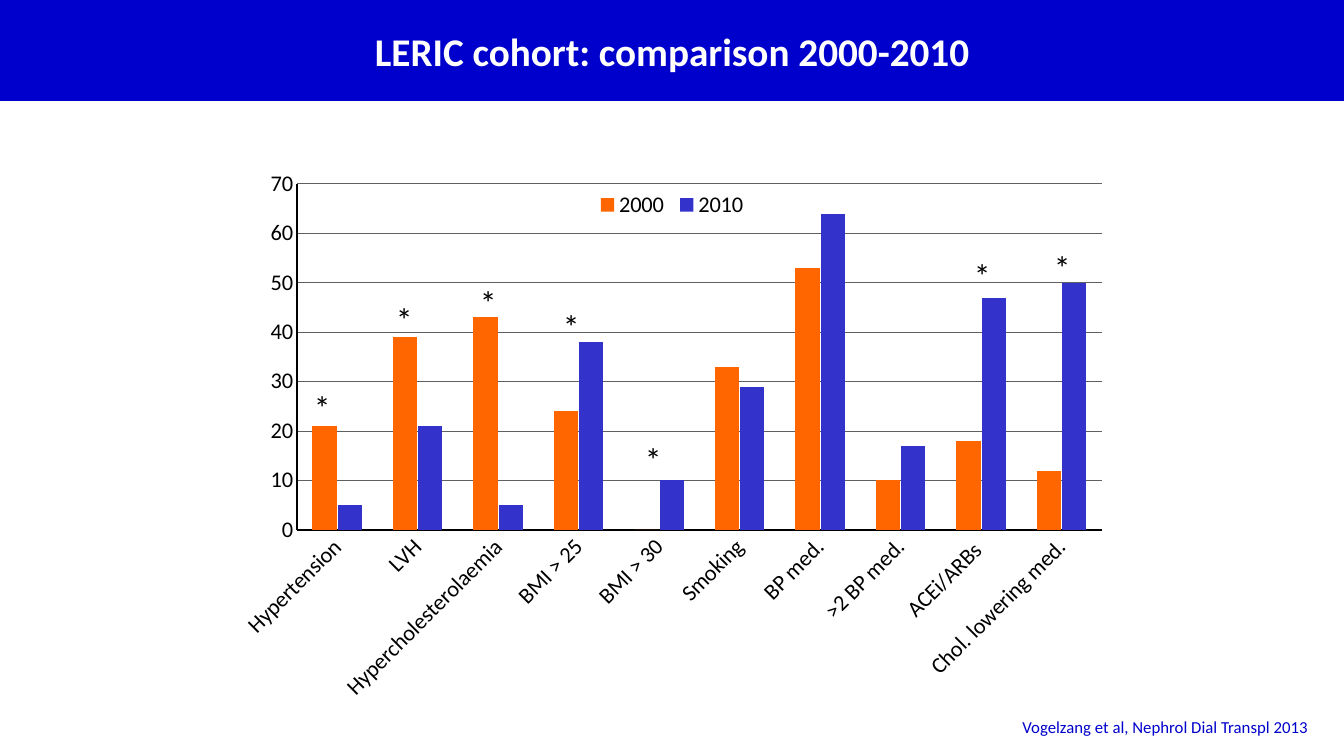
from lxml import etree
from pptx import Presentation, util as u
from pptx.chart.data import CategoryChartData
from pptx.dml.color import RGBColor
from pptx.enum import chart as ch, shapes, text
from pptx.oxml.ns import qn

TITLE = "LERIC cohort: comparison 2000-2010"
CITATION = "Vogelzang et al, Nephrol Dial Transpl 2013"
CATEGORIES = ["Hypertension", "LVH", "Hypercholesterolaemia", "BMI > 25", "BMI > 30",
              "Smoking", "BP med.", ">2 BP med.", "ACEi/ARBs ", "Chol. lowering med."]
SERIES = {
    "2000": [21, 39, 43, 24, 0, 33, 53, 10, 18, 12],
    "2010": [5, 21, 5, 38, 10, 29, 64, 17, 47, 50],
}
STARS = [(304, 382), (386, 294), (470, 277), (553, 301), (635, 434), (964, 250), (1044, 242)]
STAR_SIZE = (37, 50)

SLIDE = (1344, 756)
BANNER = (0, 0, 1344, 101)
CITATION_BOX = (846, 712, 472, 30)
CHART_BOX = (224, 158, 896, 598)
PLOT_BOX = (297, 184, 805, 346)
LEGEND_BOX = (592, 190, 160, 30)


class Theme:
    font = "Calibri"
    banner = "0000CC"
    white = "FFFFFF"
    black = "000000"
    grid = "606060"
    bars = {"2000": "FF6600", "2010": "3333CC"}
    title, star, axis, citation = 28, 24, 16, 12


def px(n):
    return u.Emu(round(n * 914400 / 100.8))


def box(rect):
    return [px(n) for n in rect]


def rgb(code):
    return RGBColor.from_string(code)


def style(font, size, color, bold=False):
    font.name, font.size, font.bold = Theme.font, u.Pt(size), bold
    font.color.rgb = rgb(color)


def write(shape, words, size, color, align, bold=False):
    p = shape.text_frame.paragraphs[0]
    p.text = words
    p.alignment = align
    style(p.runs[0].font, size, color, bold)
    return p


def place(parent, index, rect, target=None):
    for old in parent.findall(qn("c:layout")):
        parent.remove(old)
    layout = etree.Element(qn("c:layout"))
    manual = etree.SubElement(layout, qn("c:manualLayout"))
    left, top, width, height = CHART_BOX
    fractions = {"x": (rect[0] - left) / width, "y": (rect[1] - top) / height,
                 "w": rect[2] / width, "h": rect[3] / height}
    settings = {"layoutTarget": target} if target else {}
    settings.update(xMode="edge", yMode="edge", **fractions)
    for name, value in settings.items():
        etree.SubElement(manual, qn("c:" + name)).set("val", str(value))
    parent.insert(index, layout)


def add_banner(s):
    banner = s.shapes.add_shape(shapes.MSO_SHAPE.RECTANGLE, *box(BANNER))
    banner.shadow.inherit = False
    banner.fill.solid()
    banner.fill.fore_color.rgb = rgb(Theme.banner)
    banner.line.fill.background()
    banner.text_frame.vertical_anchor = text.MSO_ANCHOR.MIDDLE
    write(banner, TITLE, Theme.title, Theme.white, text.PP_ALIGN.CENTER, True)


def add_citation(s):
    citation = s.shapes.add_textbox(*box(CITATION_BOX))
    citation.text_frame.word_wrap = True
    p = write(citation, CITATION, Theme.citation, Theme.banner, text.PP_ALIGN.RIGHT)
    p.space_after = u.Pt(6)


def add_cohort_chart(s):
    data = CategoryChartData()
    data.categories = CATEGORIES
    for name, values in SERIES.items():
        data.add_series(name, values)
    chart = s.shapes.add_chart(ch.XL_CHART_TYPE.COLUMN_CLUSTERED, *box(CHART_BOX), data).chart
    chart.has_title = False
    style(chart.font, 10, Theme.black)

    plot = chart.plots[0]
    plot.gap_width, plot.overlap, plot.vary_by_categories = 128, -5, False
    for series in plot.series:
        series.invert_if_negative = False
        series.format.fill.solid()
        series.format.fill.fore_color.rgb = rgb(Theme.bars[series.name])

    for axis in (chart.category_axis, chart.value_axis):
        axis.major_tick_mark = axis.minor_tick_mark = ch.XL_TICK_MARK.NONE
        axis.format.line.color.rgb = rgb(Theme.black)
        axis.format.line.width = u.Pt(1.5)
        style(axis.tick_labels.font, Theme.axis, Theme.black)
    chart.value_axis.minimum_scale, chart.value_axis.maximum_scale = 0, 70
    chart.value_axis.major_unit = 10
    grid = chart.value_axis.major_gridlines.format.line
    grid.color.rgb, grid.width = rgb(Theme.grid), u.Pt(0.75)

    root = chart.element
    root.find(".//" + qn("c:catAx")).find(".//" + qn("a:bodyPr")).set("rot", "-2700000")
    place(root.find(".//" + qn("c:plotArea")), 0, PLOT_BOX, "inner")

    chart.has_legend = True
    chart.legend.position = ch.XL_LEGEND_POSITION.BOTTOM
    chart.legend.include_in_layout = False
    style(chart.legend.font, Theme.axis, Theme.black)
    place(root.find(".//" + qn("c:legend")), 1, LEGEND_BOX)


def add_stars(s):
    for corner in STARS:
        star = s.shapes.add_textbox(*box(corner + STAR_SIZE))
        star.text_frame.word_wrap = False
        write(star, "*", Theme.star, Theme.black, text.PP_ALIGN.LEFT)


def main():
    prs = Presentation()
    prs.slide_width, prs.slide_height = box(SLIDE)
    s = prs.slides.add_slide(prs.slide_layouts[6])
    add_banner(s)
    add_citation(s)
    add_cohort_chart(s)
    add_stars(s)
    prs.save("out.pptx")


if __name__ == "__main__":
    main()
